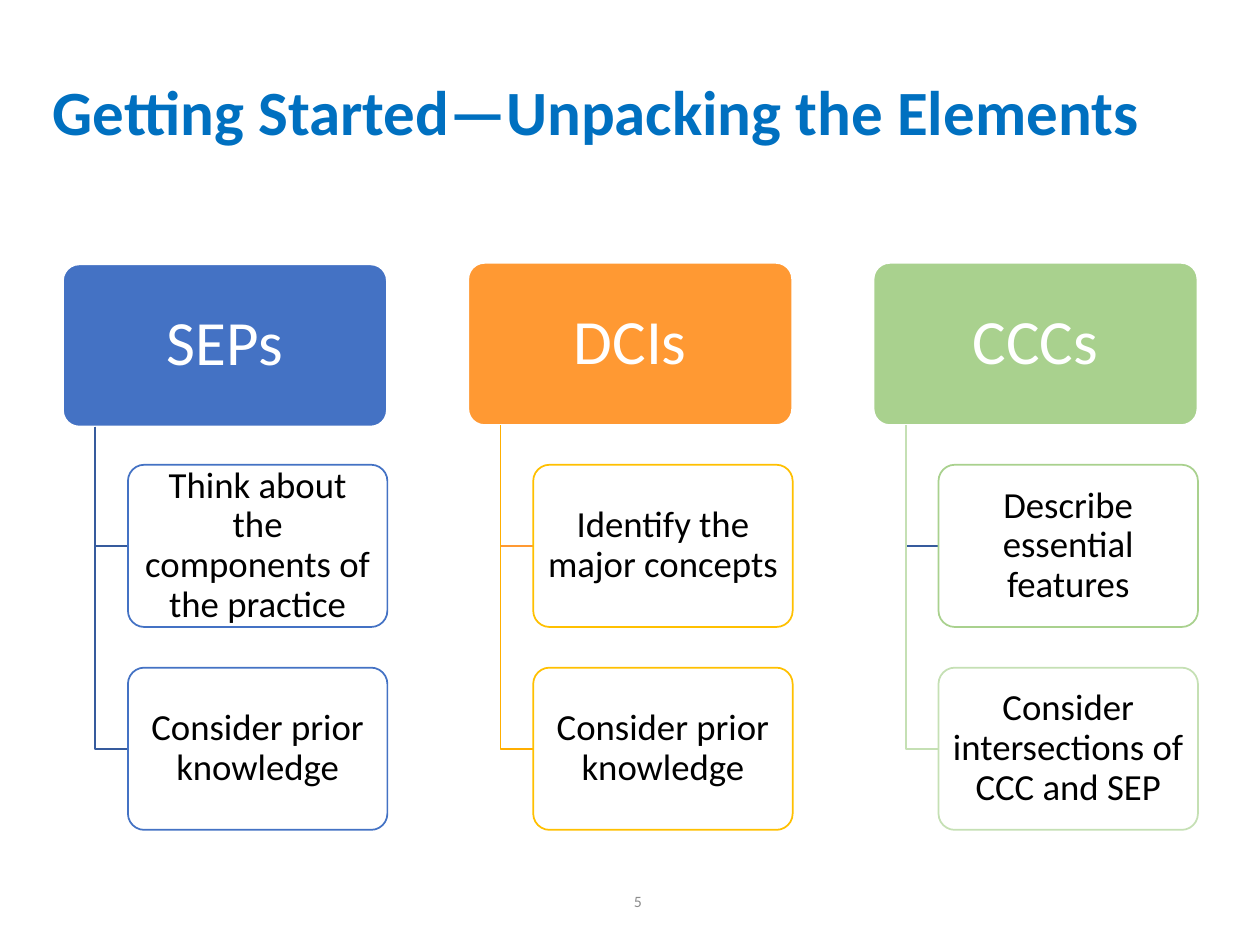
"""Build the slide that unpacks the SEP, DCI and CCC elements as three branching columns."""
from pptx import Presentation
from pptx.dml.color import RGBColor
from pptx.enum import shapes as kinds, text as t
from pptx.util import Cm, Pt


def color(value):
    return RGBColor.from_string(value)


def add_card(left, top, width, fill, outline, label, size, ink, inset):
    card = slide.shapes.add_shape(
        kinds.MSO_SHAPE.ROUNDED_RECTANGLE, Cm(left), Cm(top), Cm(width), Cm(CARD_HEIGHT))
    card.adjustments[0] = 0.1
    card.shadow.inherit = False
    card.fill.solid()
    card.fill.fore_color.rgb = color(fill)
    card.line.color.rgb = color(outline)
    card.line.width = Pt(1)
    frame = card.text_frame
    frame.text = label
    frame.word_wrap = True
    frame.vertical_anchor = t.MSO_ANCHOR.MIDDLE
    frame.margin_left = frame.margin_right = Cm(inset)
    frame.margin_top = frame.margin_bottom = Cm(inset)
    paragraph = frame.paragraphs[0]
    paragraph.alignment = t.PP_ALIGN.CENTER
    paragraph.line_spacing = 0.9
    paragraph.font.size = Pt(size)
    paragraph.font.name = "Calibri"
    paragraph.font.color.rgb = color(ink)


CARD_HEIGHT = 3.27
FIRST_COLUMN, COLUMN_STEP = 1.27, 8.17
FIRST_STEP, STEP_GAP = 9.37, 4.09
TRUNK_INDENT, STEP_INDENT = 0.65, 1.31

elements = [
    ("SEPs", "4472C4", 5.33, [
        ("Think about the components of the practice", "4472C4", "365B9D"),
        ("Consider prior knowledge", "4472C4", "365B9D")]),
    ("DCIs", "FF9933", 5.3, [
        ("Identify the major concepts", "FFC000", "FF9933"),
        ("Consider prior knowledge", "FFC000", "FFAE00")]),
    ("CCCs", "A9D18E", 5.3, [
        ("Describe essential features", "A9D18E", "365B9D"),
        ("Consider intersections of CCC and SEP", "C5E0B4", "C5E0B4")]),
]

deck = Presentation()
deck.slide_width, deck.slide_height = Cm(25.4), Cm(19.05)
slide = deck.slides.add_slide(deck.slide_layouts[5])

heading = slide.shapes.title
heading.left, heading.top, heading.width, heading.height = Cm(0.81), Cm(0.74), Cm(22.86), Cm(3.18)
heading.text_frame.text = "Getting Started—Unpacking the Elements"
heading.text_frame.auto_size = t.MSO_AUTO_SIZE.NONE
heading.text_frame.vertical_anchor = t.MSO_ANCHOR.MIDDLE
heading_line = heading.text_frame.paragraphs[0]
heading_line.alignment = t.PP_ALIGN.LEFT
heading_line.line_spacing = 0.9
heading_line.font.size = Pt(36)
heading_line.font.name = "Calibri"
heading_line.font.bold = True
heading_line.font.color.rgb = color("0070C0")

for column, (element, fill, top, steps) in enumerate(elements):
    left = FIRST_COLUMN + column * COLUMN_STEP
    add_card(left, top, 6.53, fill, "FFFFFF", element, 36, "FFFFFF", 0.28)
    trunk_x, step_x = left + TRUNK_INDENT, left + STEP_INDENT
    for row, (step, outline, branch_color) in enumerate(steps):
        step_top = FIRST_STEP + row * STEP_GAP
        middle = step_top + CARD_HEIGHT / 2
        route = slide.shapes.build_freeform(Cm(trunk_x), Cm(top + CARD_HEIGHT))
        route.add_line_segments(
            [(Cm(trunk_x), Cm(middle)), (Cm(step_x), Cm(middle))], close=False)
        branch = route.convert_to_shape()
        branch.shadow.inherit = False
        branch.fill.background()
        branch.line.color.rgb = color(branch_color)
        branch.line.width = Pt(1)
        add_card(step_x, step_top, 5.23, "FFFFFF", outline, step, 21, "000000", 0.18)

page_number = slide.shapes.add_textbox(Cm(7.47), Cm(17.65), Cm(5.72), Cm(1.02))
page_number.text_frame.text = "5"
page_number.text_frame.word_wrap = True
page_number.text_frame.vertical_anchor = t.MSO_ANCHOR.MIDDLE
number_line = page_number.text_frame.paragraphs[0]
number_line.alignment = t.PP_ALIGN.RIGHT
number_line.font.size = Pt(9)
number_line.font.name = "Calibri"
number_line.font.color.rgb = color("8C8C8C")

deck.save("out.pptx")
